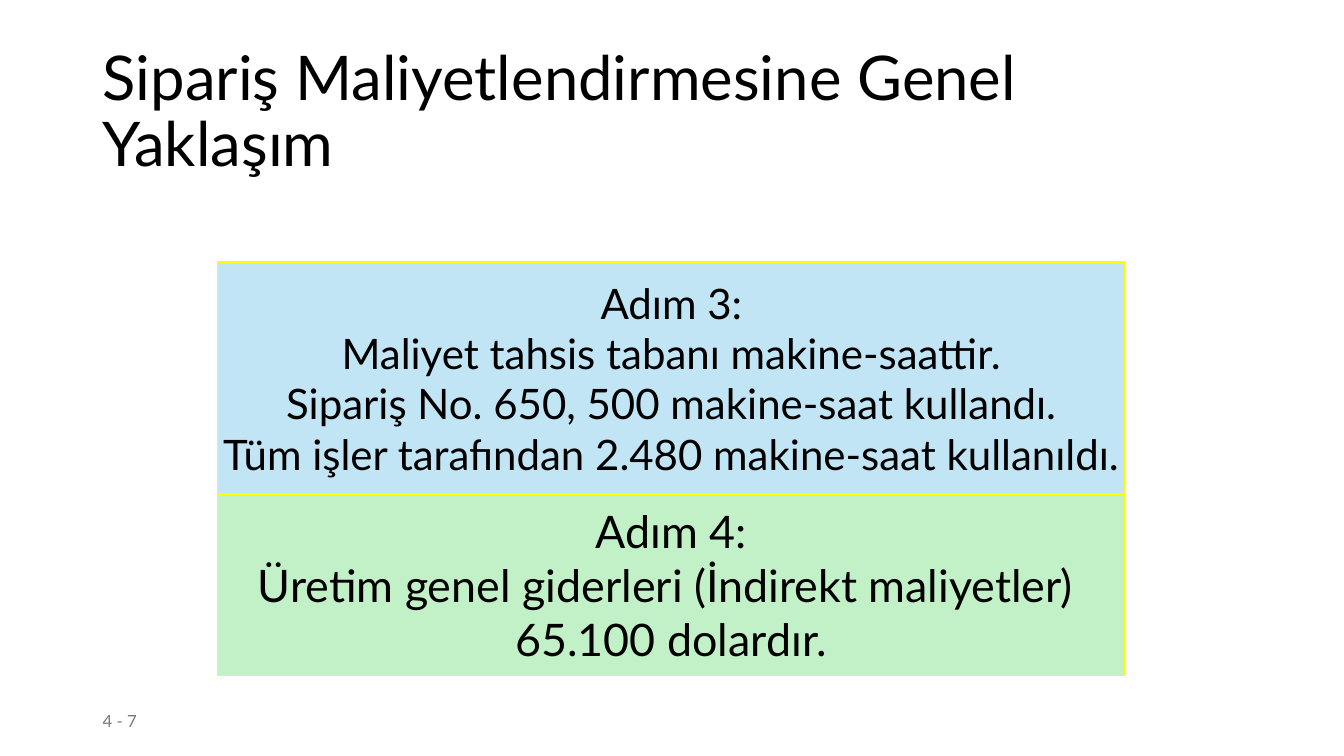
"""Build the job-order costing slide with steps 3 and 4."""
import pptx
import pptx.util
import pptx.dml.color
import pptx.enum.shapes
import pptx.enum.text

TITLE = "Sipariş Maliyetlendirmesine Genel Yaklaşım"
PAGE = "4 - 7"
STEPS = [
    ("blue", 230, 30, [
        "Adım 3:",
        "Maliyet tahsis tabanı makine-saattir.",
        "Sipariş No. 650, 500 makine-saat kullandı.",
        "Tüm işler tarafından 2.480 makine-saat kullanıldı.",
    ]),
    ("green", 180, 32, [
        "Adım 4:",
        "Üretim genel giderleri (İndirekt maliyetler) ",
        "65.100 dolardır.",
    ]),
]
COLORS = {"blue": "C1E5F5", "green": "C2F1C8", "edge": "FFFF00",
          "ink": "000000", "gray": "797979"}
FONT = "Lato"
SCALE = 9144
LEFT, TOP, WIDTH = 216, 260, 900


def px(*sizes):
    return [pptx.util.Emu(size * SCALE) for size in sizes]


def color(name):
    return pptx.dml.color.RGBColor.from_string(COLORS[name])


def write(shape, lines, size, ink="ink", align=None, space=None, wrap=True):
    frame = shape.text_frame
    frame.word_wrap = wrap
    frame.vertical_anchor = pptx.enum.text.MSO_ANCHOR.MIDDLE
    for i, line in enumerate(lines):
        para = frame.add_paragraph() if i else frame.paragraphs[0]
        para.alignment = align
        para.line_spacing = space
        run = para.add_run()
        run.text = line
        run.font.size = pptx.util.Pt(size)
        run.font.name = FONT
        run.font.color.rgb = color(ink)


def main():
    deck = pptx.Presentation()
    deck.slide_width, deck.slide_height = px(1333, 750)
    shapes = deck.slides.add_slide(deck.slide_layouts[6]).shapes

    write(shapes.add_textbox(*px(92, 695, 300, 40)), [PAGE], 12, "gray")
    write(shapes.add_textbox(*px(92, 40, 1150, 145)), [TITLE], 44, space=0.9)

    top = TOP
    for fill, height, size, lines in STEPS:
        box = shapes.add_shape(pptx.enum.shapes.MSO_SHAPE.RECTANGLE,
                               *px(LEFT, top, WIDTH, height))
        box.shadow.inherit = False
        box.fill.solid()
        box.fill.fore_color.rgb = color(fill)
        box.line.color.rgb = color("edge")
        box.line.width = pptx.util.Pt(1)
        write(box, lines, size, align=pptx.enum.text.PP_ALIGN.CENTER, wrap=False)
        top += height

    deck.save("out.pptx")


if __name__ == "__main__":
    main()
